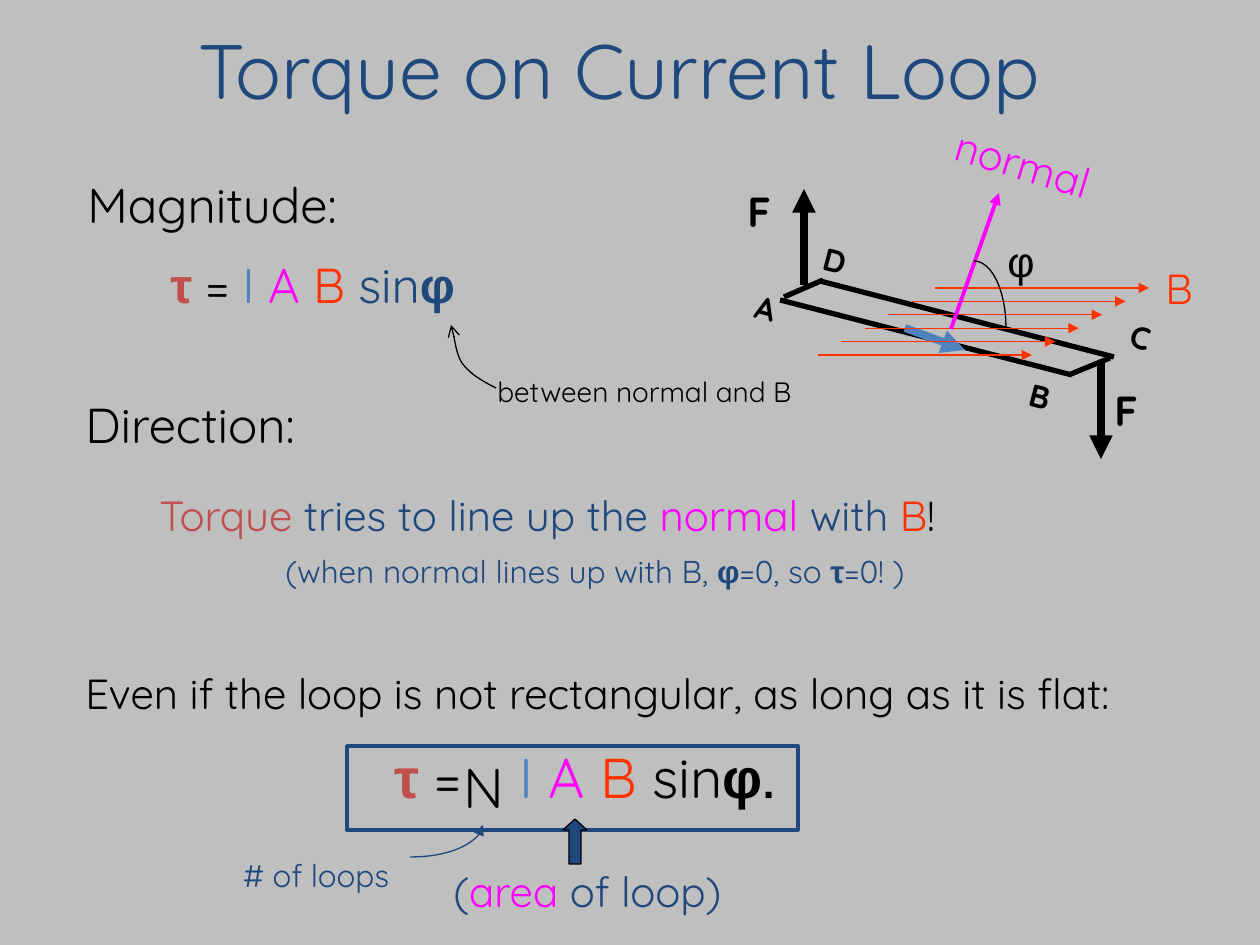
import pptx
import pptx.util
import pptx.dml.color
import pptx.enum.shapes
import pptx.enum.text
import pptx.oxml.ns
import lxml.etree

PX = 914400 / 126
HUE = {"back": "BFBFBF", "navy": "1F497D", "blue": "4F81BD", "red": "C0504D",
       "pink": "FF00FF", "orange": "FF3300", "black": "000000"}
SHAPE = pptx.enum.shapes.MSO_SHAPE
LINK = pptx.enum.shapes.MSO_CONNECTOR
QN = pptx.oxml.ns.qn


def emu(n):
    return pptx.util.Emu(round(n * PX))


def rgb(name):
    return pptx.dml.color.RGBColor.from_string(HUE[name])


def sub(node, tag, **keys):
    return lxml.etree.SubElement(node, QN(tag), **keys)


def write(para, size, runs):
    """Each run is (text, hue), then "greek" for bold Arial, then its own size."""
    for words, hue, *more in runs:
        run = para.add_run()
        run.text = words
        font = run.font
        font.name = "Arial" if more else "Quicksand"
        font.bold = bool(more)
        font.size = pptx.util.Pt(more[1] if len(more) > 1 else size)
        font.color.rgb = rgb(hue)


def text(slide, box, lines, turn=0):
    """Each line is (size, runs), then optional space before and indent."""
    shape = slide.shapes.add_textbox(*map(emu, box))
    shape.rotation = turn
    frame = shape.text_frame
    frame.word_wrap = True
    for i, (size, runs, *more) in enumerate(lines):
        para = frame.add_paragraph() if i else frame.paragraphs[0]
        gap, dent = more or (0, 0)
        para.space_before = pptx.util.Pt(gap)
        if dent:
            para._p.get_or_add_pPr().set("marL", str(emu(dent)))
        write(para, size, runs)
    return frame


def stroke(shape, hue, width, tip=None):
    shape.line.color.rgb = rgb(hue)
    shape.line.width = pptx.util.Pt(width)
    if tip:
        sub(shape.line._get_or_add_ln(), "a:tailEnd", type=tip)


def line(slide, ends, hue, width, tip=None, kind=LINK.STRAIGHT):
    link = slide.shapes.add_connector(kind, *map(emu, ends))
    stroke(link, hue, width, tip)
    sub(link._element.spPr, "a:effectLst")
    return link


def curve(slide, x, y, parts, hue, width, tip=None):
    """Draw joined cubic curves, each given by four points."""
    dots = []
    for a, b, c, d in parts:
        for k in range(13):
            t = k / 12
            s = 1 - t
            dots.append([emu(o + s**3 * p + 3 * s * s * t * q + 3 * s * t * t * r + t**3 * e)
                         for o, p, q, r, e in zip((x, y), a, b, c, d)])
    pen = slide.shapes.build_freeform(*dots[0])
    pen.add_line_segments(dots[1:], close=False)
    shape = pen.convert_to_shape()
    shape.shadow.inherit = False
    shape.fill.background()
    stroke(shape, hue, width, tip)


def solid(slide, kind, box, fill, hue, width):
    shape = slide.shapes.add_shape(kind, *map(emu, box))
    shape.shadow.inherit = False
    if fill:
        shape.fill.solid()
        shape.fill.fore_color.rgb = rgb(fill)
    else:
        shape.fill.background()
    stroke(shape, hue, width)
    return shape


def title(slide, box):
    shape = slide.shapes.title
    shape.left, shape.top, shape.width, shape.height = map(emu, box)
    frame = shape.text_frame
    frame.vertical_anchor = pptx.enum.text.MSO_ANCHOR.MIDDLE
    para = frame.paragraphs[0]
    para.alignment = pptx.enum.text.PP_ALIGN.CENTER
    write(para, 44, [("Torque on Current Loop", "navy")])


def size_part(slide, x, y):
    text(slide, (x, y, 756, 160), [
        (28, [("Magnitude:", "black")], 0, 43),
        (28, [("τ", "red", "greek"), (" = ", "black"), ("I ", "blue"), ("A ", "pink"),
              ("B ", "orange"), ("sin", "navy"), ("φ", "navy", "greek")], 12, 126)])


def way_part(slide, x, y):
    text(slide, (x, y, 305, 72), [(28, [("Direction:", "black")])])
    text(slide, (x + 74, y + 95, 1016, 126), [
        (24, [("Torque ", "red"), ("tries to line up the ", "navy"), ("normal ", "pink"),
              ("with ", "navy"), ("B", "orange"), ("!", "black")]),
        (18, [("(when normal lines up with B, ", "navy"), ("φ", "navy", "greek"),
              ("=0, so ", "navy"), ("τ", "navy", "greek"), ("=0! )", "navy")], 7, 126)])


def note(slide, x, y):
    text(slide, (x + 34, y + 43, 334, 47), [(16, [("between normal and B", "black")])])
    curve(slide, x, y, [((45, 63), (31, 56), (19, 49), (11, 38)),
                        ((11, 38), (4, 28), (3, 6), (0, 0))], "black", 0.75, "arrow")


def loop(slide, x, y):
    def at(a, b, c, d):
        return x + a, y + b, x + c, y + d

    # Loop sides and corners
    for ends in ((45, 164, 337, 239), (85, 145, 379, 221),
                 (336, 238, 375, 222), (49, 161, 88, 144)):
        line(slide, at(*ends), "black", 3)
    for name, dx, dy in (("A", 8, 149), ("B", 282, 237), ("C", 383, 178), ("D", 76, 101)):
        frame = text(slide, (x + dx, y + dy, 63, 50), [(18, [(name, "black")])], 14.5)
        frame.paragraphs[0].runs[0].font.bold = True

    # Current, field, normal and its angle
    line(slide, at(170, 192, 230, 214), "blue", 4.5, "triangle")
    for i in range(6):
        dx, dy = 83 + 23.4 * i, 219 - 13.4 * i
        line(slide, at(dx, dy, dx + 214, dy), "orange", 0.75, "triangle")
    line(slide, at(216, 193, 264, 57), "pink", 2.25, "triangle")
    text(slide, (x + 418, y + 120, 63, 63), [(24, [("B", "orange")])])
    text(slide, (x + 206, y, 190, 63), [(24, [("normal", "pink")])], 16.8)
    curve(slide, x, y, [((239, 125), (257, 125), (271, 155), (271, 192))], "black", 0.75)
    frame = text(slide, (x + 260, y + 93, 86, 63), [(24, [("φ", "black", "greek")])])
    frame.paragraphs[0].runs[0].font.bold = False

    # Forces
    for ends, dx, dy in (((366, 227, 366, 323), 367, 242), ((69, 149, 69, 53), 0, 43)):
        line(slide, at(*ends), "black", 4.5, "triangle")
        frame = text(slide, (x + dx, y + dy, 81, 63), [(24, [("F", "black")])])
        frame.paragraphs[0].runs[0].font.bold = True


def rule(slide, x, y):
    # Framed formula, with tab stops that leave room for N
    solid(slide, SHAPE.RECTANGLE, (x + 274, y + 85, 451, 84), None, "navy", 2)
    frame = text(slide, (x, y, 1207, 164), [
        (24, [("Even if the loop is not rectangular, as long as it is flat:", "black")]),
        (32, [("\t", "black"), ("τ", "red", "greek"), (" =\t", "black"), ("I ", "blue"),
              ("A ", "pink"), ("B", "orange"), (" sin", "black"), ("φ", "black", "greek"),
              (".", "black", "greek", 24)], 14, 0)])
    tabs = sub(frame.paragraphs[1]._p.get_or_add_pPr(), "a:tabLst")
    for stop in (309, 434):
        sub(tabs, "a:tab", pos=str(emu(stop)), algn="l")
    text(slide, (x + 378, y + 85, 63, 79), [(32, [("N", "black")])])

    # Remarks below the frame
    arrow = solid(slide, SHAPE.UP_ARROW, (x + 490, y + 158, 24, 45), "navy", "black", 0.75)
    arrow.adjustments[1] = 0.46
    text(slide, (x + 368, y + 198, 357, 63),
         [(24, [("(", "navy"), ("area ", "pink"), ("of loop)", "navy")])])
    text(slide, (x + 158, y + 189, 189, 54), [(18, [("# of loops", "navy")])])
    link = line(slide, (x + 337, y + 196, x + 410, y + 164), "navy", 0.75,
                "triangle", LINK.CURVE)
    link._element.spPr.find(QN("a:prstGeom")).set("prst", "curvedConnector2")


def main():
    deck = pptx.Presentation()
    deck.slide_width, deck.slide_height = emu(1260), emu(945)
    slide = deck.slides.add_slide(deck.slide_layouts[5])
    slide.background.fill.solid()
    slide.background.fill.fore_color.rgb = rgb("back")
    title(slide, (84, -10, 1071, 158))
    size_part(slide, 32, 168)
    way_part(slide, 73, 388)
    rule(slide, 73, 661)
    loop(slide, 735, 136)
    note(slide, 451, 325)
    deck.save("out.pptx")


if __name__ == "__main__":
    main()
